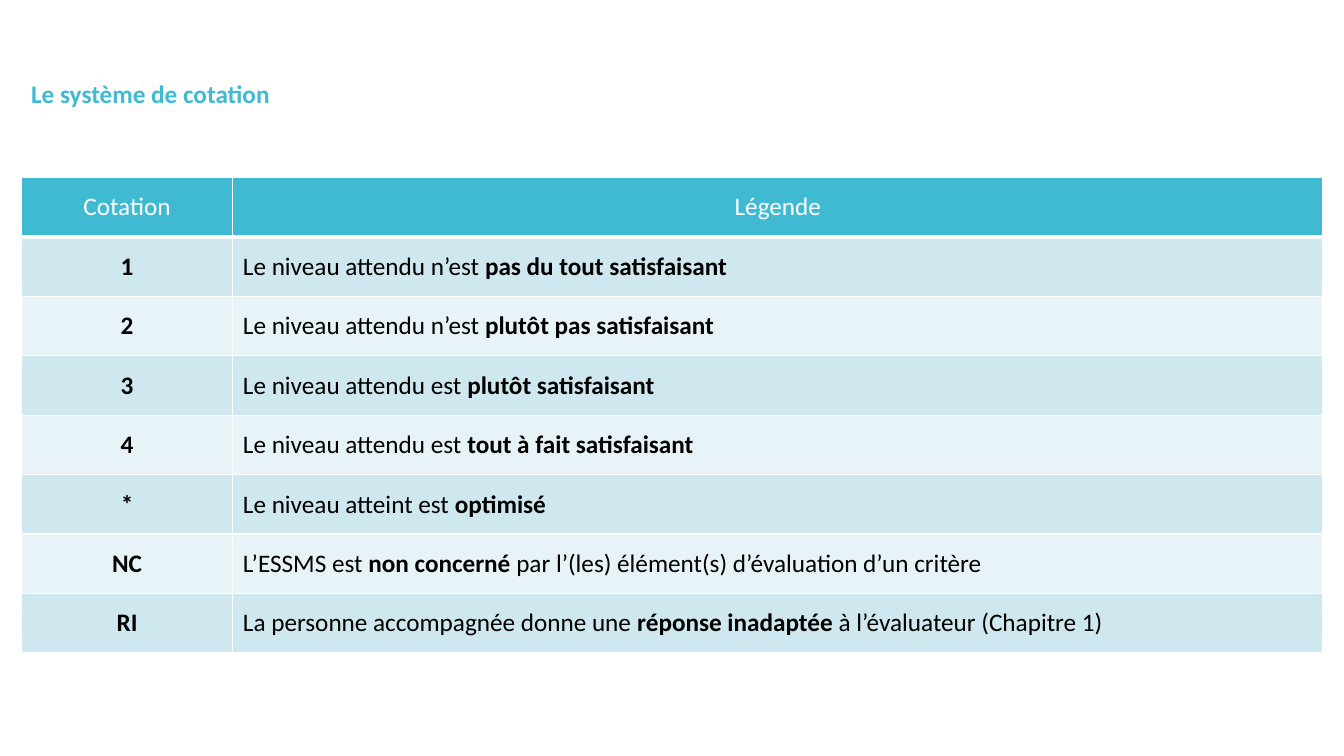
from typing import NamedTuple

import lxml.etree
import pptx
import pptx.dml.color
import pptx.enum.text
import pptx.oxml.ns
import pptx.slide
import pptx.table
import pptx.text.text
import pptx.util

EMU_PER_PX = 9144  # 100 px to the inch
FONT = "Calibri"
TEXT_SIZE = pptx.util.Pt(18)

TURQUOISE = pptx.dml.color.RGBColor(0x40, 0xBA, 0xD2)
BAND_DARK = pptx.dml.color.RGBColor(0xCF, 0xE7, 0xEE)
BAND_LIGHT = pptx.dml.color.RGBColor(0xE8, 0xF3, 0xF7)
WHITE = pptx.dml.color.RGBColor(0xFF, 0xFF, 0xFF)
BLACK = pptx.dml.color.RGBColor(0x00, 0x00, 0x00)

COLUMN_WIDTHS = (210, 1081)
ROW_HEIGHT = 59


class Rating(NamedTuple):
    """One level of the scale; the key words of its legend are bold."""
    code: str
    before: str
    key_words: str
    after: str = ""


RATINGS = (
    Rating("1", "Le niveau attendu n’est ", "pas du tout satisfaisant"),
    Rating("2", "Le niveau attendu n’est ", "plutôt pas satisfaisant"),
    Rating("3", "Le niveau attendu est ", "plutôt satisfaisant"),
    Rating("4", "Le niveau attendu est ", "tout à fait satisfaisant"),
    Rating("*", "Le niveau atteint est ", "optimisé"),
    Rating("NC", "L’ESSMS est ", "non concerné ",
           "par l’(les) élément(s) d’évaluation d’un critère"),
    Rating("RI", "La personne accompagnée donne une ", "réponse inadaptée ",
           "à l’évaluateur (Chapitre 1)"),
)


def px(length: int) -> pptx.util.Emu:
    return pptx.util.Emu(length * EMU_PER_PX)


def add_text(paragraph: pptx.text.text._Paragraph, text: str,
             color: pptx.dml.color.RGBColor, bold: bool) -> None:
    run = paragraph.add_run()
    run.text = text
    run.font.name = FONT
    run.font.size = TEXT_SIZE
    run.font.bold = bold
    run.font.color.rgb = color


def set_borders(cell: pptx.table._Cell, bottom_pt: int) -> None:
    properties = cell._tc.get_or_add_tcPr()
    widths = {"a:lnL": 1, "a:lnR": 1, "a:lnT": 1, "a:lnB": bottom_pt}
    for position, (tag, width) in enumerate(widths.items()):
        line = lxml.etree.Element(pptx.oxml.ns.qn(tag), w=str(pptx.util.Pt(width)))
        fill = lxml.etree.SubElement(line, pptx.oxml.ns.qn("a:solidFill"))
        lxml.etree.SubElement(fill, pptx.oxml.ns.qn("a:srgbClr"), val=str(WHITE))
        properties.insert(position, line)


def style_cell(cell: pptx.table._Cell, color: pptx.dml.color.RGBColor,
               centered: bool, bottom_pt: int = 1) -> pptx.text.text._Paragraph:
    """Fill and frame a cell, and return its paragraph."""
    cell.fill.solid()
    cell.fill.fore_color.rgb = color
    cell.vertical_anchor = pptx.enum.text.MSO_ANCHOR.MIDDLE
    set_borders(cell, bottom_pt)
    paragraph = cell.text_frame.paragraphs[0]
    align = pptx.enum.text.PP_ALIGN
    paragraph.alignment = align.CENTER if centered else align.LEFT
    return paragraph


def add_heading(slide: pptx.slide.Slide) -> None:
    heading = slide.shapes.add_textbox(px(21), px(73), px(273), px(40))
    heading.text_frame.word_wrap = False
    heading.text_frame.auto_size = pptx.enum.text.MSO_AUTO_SIZE.SHAPE_TO_FIT_TEXT
    add_text(heading.text_frame.paragraphs[0], "Le système de cotation", TURQUOISE, True)


def add_rating_table(slide: pptx.slide.Slide) -> None:
    row_count = len(RATINGS) + 1
    ratings_table = slide.shapes.add_table(
        row_count, len(COLUMN_WIDTHS), px(21), px(176),
        px(sum(COLUMN_WIDTHS)), px(ROW_HEIGHT * row_count)).table
    for column, width in zip(ratings_table.columns, COLUMN_WIDTHS):
        column.width = px(width)

    # Header row
    for column_index, label in enumerate(("Cotation", "Légende")):
        header = style_cell(ratings_table.cell(0, column_index), TURQUOISE, True, 3)
        add_text(header, label, WHITE, False)

    # Rating rows in alternating bands
    for row_index, rating in enumerate(RATINGS, start=1):
        band = BAND_DARK if row_index % 2 else BAND_LIGHT
        code = style_cell(ratings_table.cell(row_index, 0), band, True)
        add_text(code, rating.code, BLACK, True)
        legend = style_cell(ratings_table.cell(row_index, 1), band, False)
        add_text(legend, rating.before, BLACK, False)
        add_text(legend, rating.key_words, BLACK, True)
        if rating.after:
            add_text(legend, rating.after, BLACK, False)


def main() -> None:
    presentation = pptx.Presentation()
    presentation.slide_width = px(1333)
    presentation.slide_height = px(750)
    slide = presentation.slides.add_slide(presentation.slide_layouts[6])
    add_rating_table(slide)
    add_heading(slide)
    presentation.save("out.pptx")


if __name__ == "__main__":
    main()
